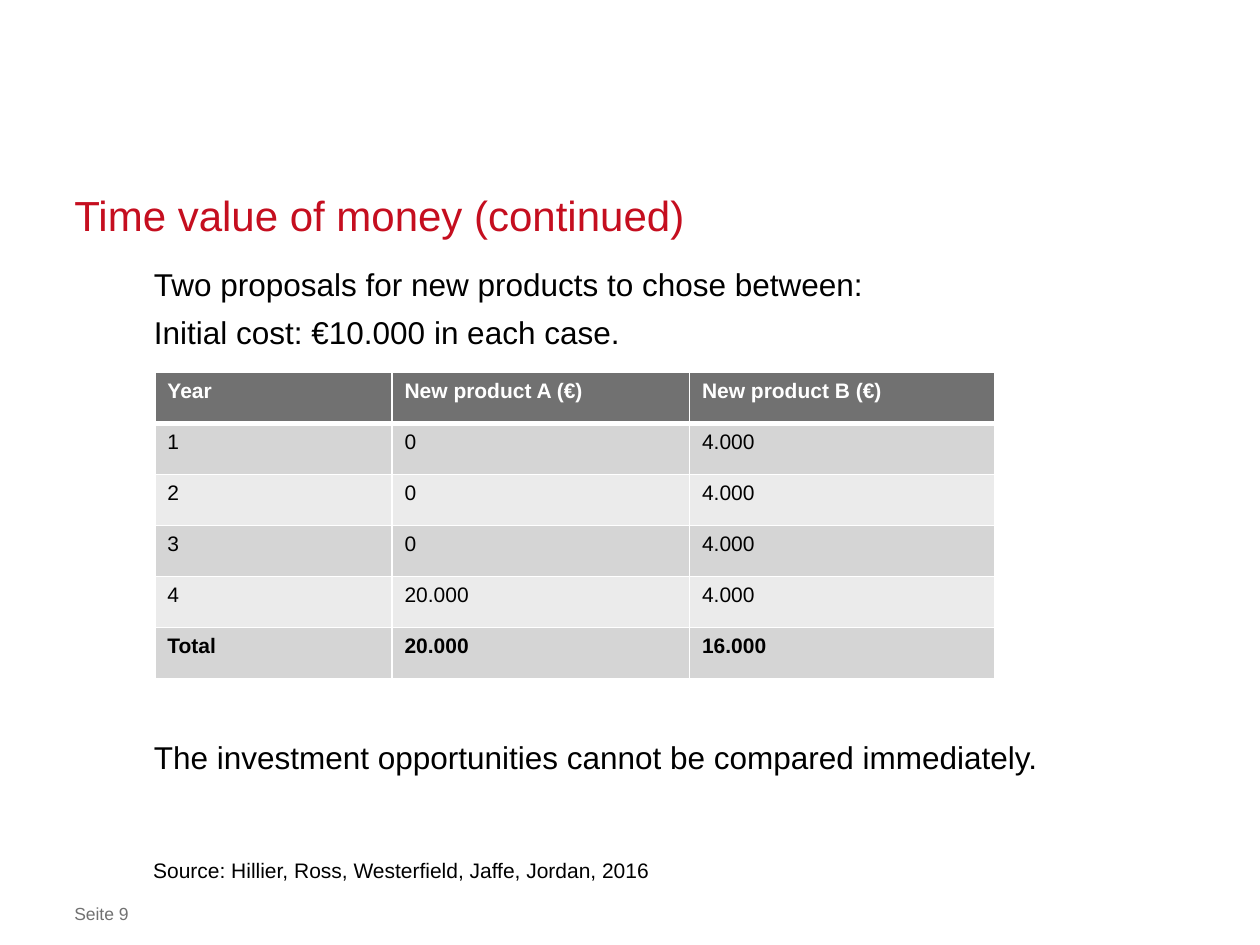
from lxml import etree
from pptx import Presentation
from pptx.dml.color import RGBColor
from pptx.enum.text import MSO_ANCHOR, PP_ALIGN
from pptx.oxml.ns import qn
from pptx.util import Pt

LEFT, CENTER = PP_ALIGN.LEFT, PP_ALIGN.CENTER
TOP, BOTTOM = MSO_ANCHOR.TOP, MSO_ANCHOR.BOTTOM
FONT = "Arial"
COLORS = {
    "title": "C50E1F", "text": "000000", "gray": "717171",
    "white": "FFFFFF", "odd": "D5D5D5", "even": "EBEBEB",
}

TITLE = "Time value of money (continued)"
BODY = [
    ("Two proposals for new products to chose between:", 0),
    ("Initial cost: €10.000 in each case.", 5),
    ("The investment opportunities cannot be compared immediately.", 221),
]
SOURCE = "Source: Hillier, Ross, Westerfield, Jaffe, Jordan, 2016"
PAGE = "Seite 9"
ROWS = [
    ("Year", "New product A (€)", "New product B (€)"),
    ("1", "0", "4.000"),
    ("2", "0", "4.000"),
    ("3", "0", "4.000"),
    ("4", "20.000", "4.000"),
    ("Total", "20.000", "16.000"),
]
TABLE_LEFT, TABLE_TOP = 88.5, 213
COL_WIDTHS = (135.5, 170, 174.5)
ROW_HEIGHT = 29.16


def rgb(name):
    return RGBColor.from_string(COLORS[name])


def style(p, size, color, bold=False):
    for r in p.runs:
        r.font.name = FONT
        r.font.size = Pt(size)
        r.font.bold = bold
        r.font.color.rgb = rgb(color)


def add_text(slide, box, lines, size, color, spacing=None, align=LEFT,
             anchor=TOP, inset=(0, 0)):
    tf = slide.shapes.add_textbox(*map(Pt, box)).text_frame
    tf.word_wrap = True
    tf.vertical_anchor = anchor
    tf.margin_left = tf.margin_right = Pt(inset[0])
    tf.margin_top = tf.margin_bottom = Pt(inset[1])
    tf.text = "\n".join(text for text, _ in lines)
    for p, (_, gap) in zip(tf.paragraphs, lines):
        p.alignment = align
        if spacing:
            p.line_spacing = Pt(spacing)
        if gap:
            p.space_before = Pt(gap)
        style(p, size, color)


def set_borders(cell, widths):
    tc_pr = cell._tc.get_or_add_tcPr()
    for side, width in zip("LRTB", widths):
        ln = etree.SubElement(tc_pr, qn(f"a:ln{side}"), w=str(Pt(width)))
        fill = etree.SubElement(ln, qn("a:solidFill"))
        etree.SubElement(fill, qn("a:srgbClr"), val=COLORS["white"])


def add_proposals(slide):
    table = slide.shapes.add_table(
        len(ROWS), len(COL_WIDTHS), Pt(TABLE_LEFT), Pt(TABLE_TOP),
        Pt(sum(COL_WIDTHS)), Pt(ROW_HEIGHT * len(ROWS))).table
    for column, width in zip(table.columns, COL_WIDTHS):
        column.width = Pt(width)
    for i, row in enumerate(ROWS):
        table.rows[i].height = Pt(ROW_HEIGHT)
        header = i == 0
        background = "gray" if header else "odd" if i % 2 else "even"
        for j, text in enumerate(row):
            cell = table.cell(i, j)
            set_borders(cell, (1, 1, 3 if i == 1 else 1, 3 if header else 1))
            cell.fill.solid()
            cell.fill.fore_color.rgb = rgb(background)
            cell.text_frame.text = text
            p = cell.text_frame.paragraphs[0]
            p.alignment = LEFT
            style(p, 12, "white" if header else "text",
                  header or i == len(ROWS) - 1)


def main():
    prs = Presentation()
    prs.slide_width, prs.slide_height = Pt(720), Pt(540)
    s = prs.slides.add_slide(prs.slide_layouts[6])
    add_text(s, (88, 151.2, 533, 320.4), BODY, 18, "text", spacing=22)
    add_text(s, (42.5, 516.2, 521.3, 12.2), [(PAGE, 0)], 10, "gray")
    add_text(s, (42.5, 108.7, 635, 28.1), [(TITLE, 0)], 24, "title",
             spacing=30, anchor=BOTTOM)
    add_text(s, (70.6, 486.7, 317.5, 21.6), [(SOURCE, 0)], 12, "text",
             align=CENTER, inset=(7.2, 3.6))
    add_proposals(s)
    prs.save("out.pptx")


if __name__ == "__main__":
    main()
